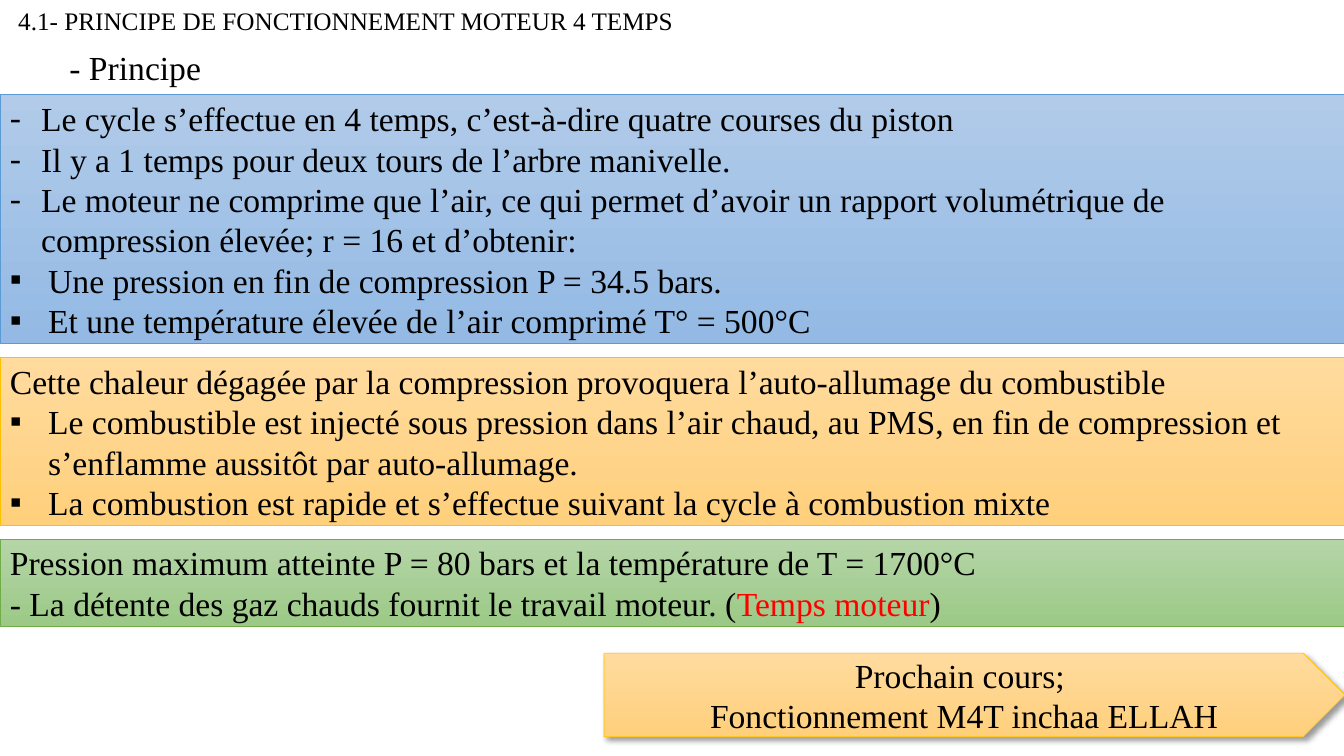
"""Build the slide on how a four-stroke engine works."""
from lxml import etree
from pptx import Presentation
from pptx import util as u
from pptx.dml.color import RGBColor
from pptx.enum import shapes, text
from pptx.oxml import ns

FONT = "Times New Roman"
INDENTS = {"-": 0.31, "▪": 0.38}
BLUE = ("B1CBE9", "93B9E4", "5B9BD5")
ORANGE = ("FFDB9E", "FFD07C", "FFC000")
GREEN = ("B5D5A7", "9CC987", "70AD47")
WHITE = ("FFFFFF", "FFFFFF", "FFFFFF")
RECTANGLE = shapes.MSO_SHAPE.RECTANGLE
PENTAGON = shapes.MSO_SHAPE.PENTAGON
LEFT, CENTER = text.PP_ALIGN.LEFT, text.PP_ALIGN.CENTER


def rgb(color):
    """Turn a hex string into a colour."""
    return RGBColor.from_string(color)


def write(para, spans, size=24, align=LEFT, bullet=None):
    """Fill a paragraph with (wording, colour) spans."""
    para.alignment = align
    if bullet:
        properties = para._p.get_or_add_pPr()
        indent = u.Inches(INDENTS[bullet])
        properties.set("marL", str(indent))
        properties.set("indent", str(-indent))
        etree.SubElement(properties, ns.qn("a:buFont"), typeface=FONT)
        etree.SubElement(properties, ns.qn("a:buChar"), char=bullet)
    for wording, color in spans:
        span = para.add_run()
        span.text = wording
        span.font.name = FONT
        span.font.size = u.Pt(size)
        span.font.color.rgb = rgb(color)


deck = Presentation()
deck.slide_width, deck.slide_height = u.Inches(13.33), u.Inches(7.5)
page = deck.slides.add_slide(deck.slide_layouts[5])

title = page.shapes.title
title.left, title.top = u.Inches(0), u.Inches(0)
title.width, title.height = u.Inches(6.86), u.Inches(0.4)
title.text_frame.auto_size = text.MSO_AUTO_SIZE.NONE
title.text_frame.vertical_anchor = text.MSO_ANCHOR.TOP
write(title.text_frame.paragraphs[0],
      [("4.1- PRINCIPE DE FONCTIONNEMENT MOTEUR 4 TEMPS", "000000")], size=18, align=CENTER)

panels = [
    (RECTANGLE, (0.59, 0.4, 1.65, 0.53), WHITE, LEFT, [(None, "- Principe")]),
    (RECTANGLE, (0, 0.94, 13.33, 2.47), BLUE, LEFT, [
        ("-", "Le cycle s’effectue en 4 temps, c’est-à-dire quatre courses du piston"),
        ("-", "Il y a 1 temps pour deux tours de l’arbre manivelle."),
        ("-", "Le moteur ne comprime que l’air, ce qui permet d’avoir un rapport volumétrique de "
              "compression élevée; r = 16 et d’obtenir:"),
        ("▪", "Une pression en fin de compression P = 34.5 bars."),
        ("▪", "Et une température élevée de l’air comprimé T° = 500°C")]),
    (RECTANGLE, (0, 3.55, 13.33, 1.66), ORANGE, LEFT, [
        (None, "Cette chaleur dégagée par la compression provoquera l’auto-allumage du combustible"),
        ("▪", "Le combustible est injecté sous pression dans l’air chaud, au PMS, en fin de "
              "compression et s’enflamme aussitôt par auto-allumage."),
        ("▪", "La combustion est rapide et s’effectue suivant la cycle à combustion mixte")]),
    (RECTANGLE, (0, 5.35, 13.33, 0.86), GREEN, LEFT, [
        (None, "Pression maximum atteinte P = 80 bars et la température de T = 1700°C"),
        (None, "- La détente des gaz chauds fournit le travail moteur. (|Temps moteur|)")]),
    (PENTAGON, (5.99, 6.48, 7.35, 0.83), ORANGE, CENTER, [
        (None, "Prochain cours; "),
        (None, "Fonctionnement M4T inchaa ELLAH")]),
]

for kind, place, (top_color, bottom_color, line_color), align, lines in panels:
    box = page.shapes.add_shape(kind, *(u.Inches(length) for length in place))
    box.shadow.inherit = False
    if top_color == bottom_color:
        box.fill.solid()
        box.fill.fore_color.rgb = rgb(top_color)
    else:
        box.fill.gradient()
        box.fill.gradient_angle = 270
        for stop, color in zip(box.fill.gradient_stops, (top_color, bottom_color)):
            stop.color.rgb = rgb(color)
    box.line.color.rgb = rgb(line_color)
    box.line.width = u.Pt(0.5)

    if kind == PENTAGON:
        effects = box._element.spPr.find(ns.qn("a:effectLst"))
        shadow = etree.SubElement(effects, ns.qn("a:outerShdw"), blurRad=str(u.Pt(4)),
                                  dist=str(u.Pt(3)), dir="2700000", algn="tl", rotWithShape="0")
        shade = etree.SubElement(shadow, ns.qn("a:srgbClr"), val="000000")
        etree.SubElement(shade, ns.qn("a:alpha"), val="40000")

    frame = box.text_frame
    frame.word_wrap = True
    frame.vertical_anchor = text.MSO_ANCHOR.MIDDLE
    for index, (bullet, line) in enumerate(lines):
        para = frame.add_paragraph() if index else frame.paragraphs[0]
        colors = ("000000", "FF0000", "000000")
        write(para, list(zip(line.split("|"), colors)), align=align, bullet=bullet)

deck.save("out.pptx")
